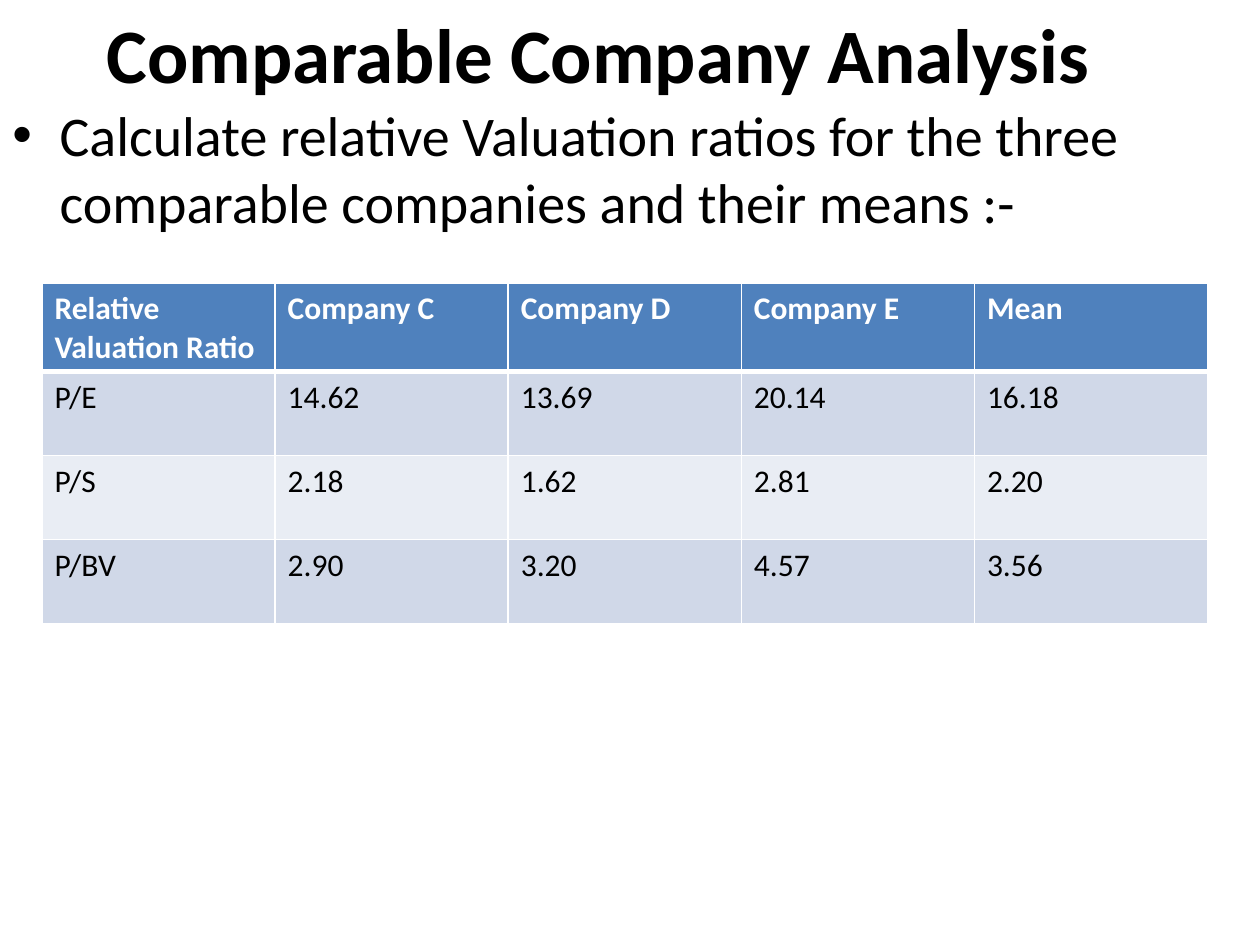
import pptx
import pptx.dml.color
import pptx.enum.text
import pptx.oxml
import pptx.oxml.ns
import pptx.util
from lxml import etree

Pt = pptx.util.Pt

TITLE = "Comparable Company Analysis"
TASK = ("Calculate relative Valuation ratios for the three comparable "
        "companies and their means :-")
RATIOS = [
    ("Relative Valuation Ratio", "Company C", "Company D", "Company E", "Mean"),
    ("P/E", "14.62", "13.69", "20.14", "16.18"),
    ("P/S", "2.18", "1.62", "2.81", "2.20"),
    ("P/BV", "2.90", "3.20", "4.57", "3.56"),
]
THEME = {
    "font": "Calibri",
    "text": "000000", "header_text": "FFFFFF", "border": "FFFFFF",
    "header_fill": "4F81BD", "bands": ("D0D8E8", "E9EDF4"),
    "title_size": 44, "task_size": 32, "table_size": 18,
}
COLUMN_WIDTH, ROW_HEIGHT = 133.2, 48
BULLET_INDENT = 27


def rgb(colour):
    return pptx.dml.color.RGBColor.from_string(colour)


def style(paragraph, size, colour=THEME["text"], bold=False):
    for run in paragraph.runs:
        run.font.name = THEME["font"]
        run.font.size = Pt(size)
        run.font.bold = bold
        run.font.color.rgb = rgb(colour)


def add_text(slide, text, left, top, width, height):
    frame = slide.shapes.add_textbox(Pt(left), Pt(top), Pt(width), Pt(height)).text_frame
    frame.word_wrap = True
    frame.text = text
    return frame


def add_bullet(paragraph):
    properties = paragraph._p.get_or_add_pPr()
    properties.set("marL", str(Pt(BULLET_INDENT)))
    properties.set("indent", str(-Pt(BULLET_INDENT)))
    etree.SubElement(properties, pptx.oxml.ns.qn("a:buFont"), typeface="Arial")
    etree.SubElement(properties, pptx.oxml.ns.qn("a:buChar"), char="•")


def add_borders(cell, widths):
    properties = cell._tc.get_or_add_tcPr()
    for side, width in widths.items():
        properties.append(pptx.oxml.parse_xml(
            f'<a:ln{side} {pptx.oxml.ns.nsdecls("a")} w="{Pt(width)}"><a:solidFill>'
            f'<a:srgbClr val="{THEME["border"]}"/></a:solidFill></a:ln{side}>'))


def add_ratios(slide, left, top):
    row_count, column_count = len(RATIOS), len(RATIOS[0])
    table = slide.shapes.add_table(
        row_count, column_count, Pt(left), Pt(top),
        Pt(COLUMN_WIDTH * column_count), Pt(ROW_HEIGHT * row_count)).table
    for r, values in enumerate(RATIOS):
        header = r == 0
        fill = THEME["header_fill"] if header else THEME["bands"][(r - 1) % 2]
        colour = THEME["header_text"] if header else THEME["text"]
        widths = {"L": 1, "R": 1, "T": 3 if r == 1 else 1, "B": 3 if header else 1}
        for c, value in enumerate(values):
            cell = table.cell(r, c)
            cell.text_frame.text = value
            style(cell.text_frame.paragraphs[0], THEME["table_size"], colour, header)
            add_borders(cell, widths)
            cell.fill.solid()
            cell.fill.fore_color.rgb = rgb(fill)


def main():
    presentation = pptx.Presentation()
    presentation.slide_width, presentation.slide_height = Pt(720), Pt(540)
    slide = presentation.slides.add_slide(presentation.slide_layouts[6])

    title = add_text(slide, TITLE, 0, 0, 684, 60)
    title.vertical_anchor = pptx.enum.text.MSO_ANCHOR.MIDDLE
    title.paragraphs[0].alignment = pptx.enum.text.PP_ALIGN.CENTER
    style(title.paragraphs[0], THEME["title_size"], bold=True)

    task = add_text(slide, TASK, 0, 54, 720, 486)
    add_bullet(task.paragraphs[0])
    style(task.paragraphs[0], THEME["task_size"])

    add_ratios(slide, 24, 162)
    presentation.save("out.pptx")


if __name__ == "__main__":
    main()
